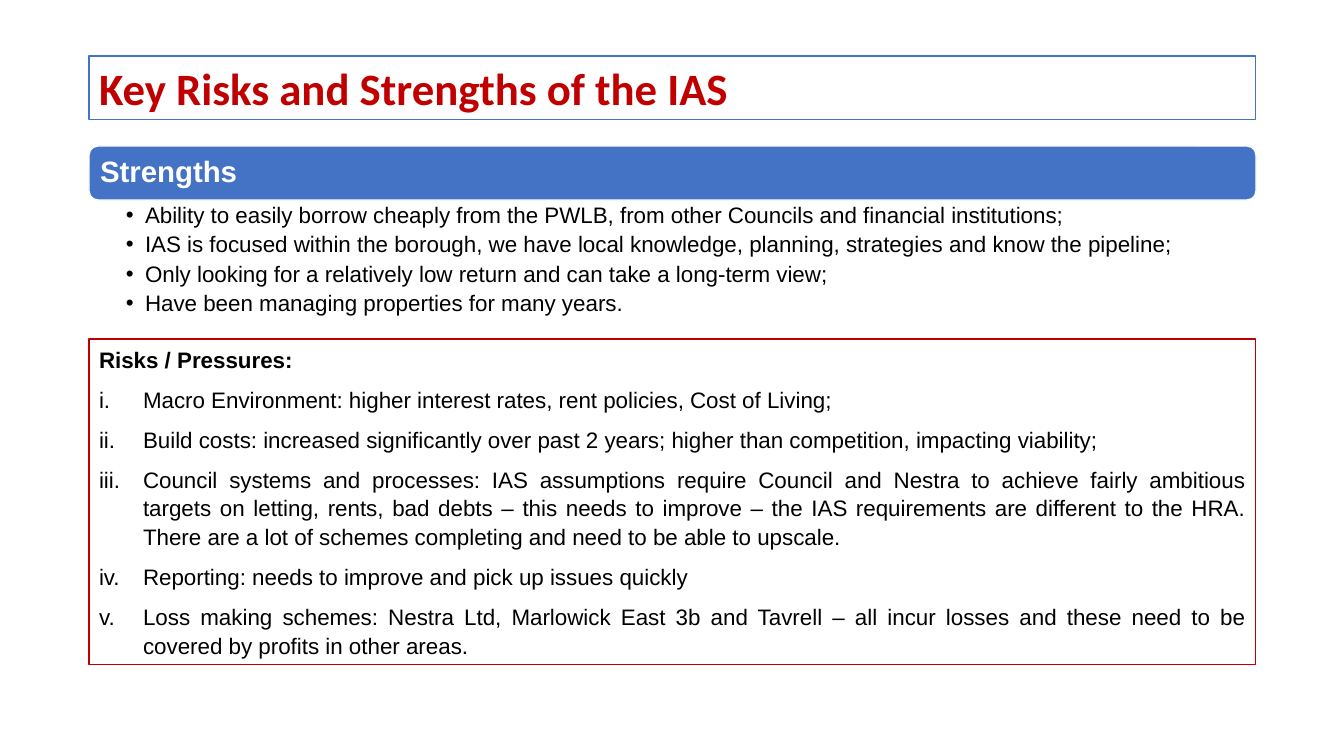
from lxml.etree import SubElement
from pptx import Presentation
from pptx.dml.color import RGBColor
from pptx.enum.shapes import MSO_SHAPE
from pptx.enum.text import MSO_ANCHOR, PP_ALIGN
from pptx.oxml.ns import qn
from pptx.util import Pt

PX = 914400 / 100.8
LEFT, WIDE = 89, 1167
BLUE, RED, BLACK, WHITE = "4472C4", "C00000", "000000", "FFFFFF"


def paint(target, tone):
    target.rgb = RGBColor.from_string(tone)


def write(spot, lines, font, size, tone, inset=(10, 5, 10, 5)):
    box = slide.shapes.add_textbox(*[round(n * PX) for n in spot])
    frame = box.text_frame
    frame.word_wrap = True
    sides = [round(n * PX) for n in inset]
    frame.margin_left, frame.margin_top, frame.margin_right, frame.margin_bottom = sides
    frame.text = "\n".join(lines)
    for para in frame.paragraphs:
        for run in para.runs:
            run.font.name = font
            run.font.size = Pt(size)
            paint(run.font.color, tone)
    return box


deck = Presentation()
deck.slide_width, deck.slide_height = round(1344 * PX), round(756 * PX)
slide = deck.slides.add_slide(deck.slide_layouts[6])

title = write((LEFT, 56, WIDE, 64), ["Key Risks and Strengths of the IAS"], "Calibri", 32, RED)
title.text_frame.paragraphs[0].runs[0].font.bold = True

risks = write((LEFT, 339, WIDE, 326), [
    "Risks / Pressures:",
    "Macro Environment: higher interest rates, rent policies, Cost of Living;",
    "Build costs: increased significantly over past 2 years; higher than competition, impacting viability;",
    "Council systems and processes: IAS assumptions require Council and Nestra to achieve fairly ambitious "
    "targets on letting, rents, bad debts – this needs to improve – the IAS requirements are different to "
    "the HRA. There are a lot of schemes completing and need to be able to upscale.",
    "Reporting: needs to improve and pick up issues quickly",
    "Loss making schemes: Nestra Ltd, Marlowick East 3b and Tavrell – all incur losses and these need to be "
    "covered by profits in other areas.",
], "Arial", 16, BLACK)
for para in risks.text_frame.paragraphs:
    para.alignment = PP_ALIGN.JUSTIFY
    para.line_spacing = 1.07
    para.space_after = Pt(8)
head, *items = risks.text_frame.paragraphs
head.runs[0].font.bold = True

for box, tone in ((title, BLUE), (risks, RED)):
    box.line.width = Pt(0.75)
    paint(box.line.color, tone)

band = slide.shapes.add_shape(
    MSO_SHAPE.ROUNDED_RECTANGLE, *[round(n * PX) for n in (LEFT, 146, WIDE, 54)])
band.shadow.inherit = False
band.fill.solid()
paint(band.fill.fore_color, BLUE)
paint(band.line.color, WHITE)
band.line.width = Pt(1)

label = write((91, 149, 1162, 48), ["Strengths"], "Arial", 21, WHITE, (9, 9, 9, 9))
label.text_frame.vertical_anchor = MSO_ANCHOR.MIDDLE
label.text_frame.paragraphs[0].line_spacing = 0.9
label.text_frame.paragraphs[0].runs[0].font.bold = True

gains = write((LEFT, 201, WIDE, 115), [
    "Ability to easily borrow cheaply from the PWLB, from other Councils and financial institutions;",
    "IAS is focused within the borough, we have local knowledge, planning, strategies and know the pipeline;",
    "Only looking for a relatively low return and can take a long-term view;",
    "Have been managing properties for many years.",
], "Arial", 16, BLACK, (37, 3, 16, 3))
points = gains.text_frame.paragraphs
for para in points:
    para.line_spacing = 0.9
    para.space_after = Pt(3.7)

for group, dent, tag, mark in (
    (items, 44, "a:buAutoNum", {"type": "romanLcPeriod"}),
    (points, 19, "a:buChar", {"char": "•"}),
):
    for para in group:
        props = para._p.get_or_add_pPr()
        props.set("marL", str(round(dent * PX)))
        props.set("indent", str(round(-dent * PX)))
        SubElement(props, qn("a:buFont"), typeface="Arial")
        SubElement(props, qn(tag), mark)

deck.save("out.pptx")
